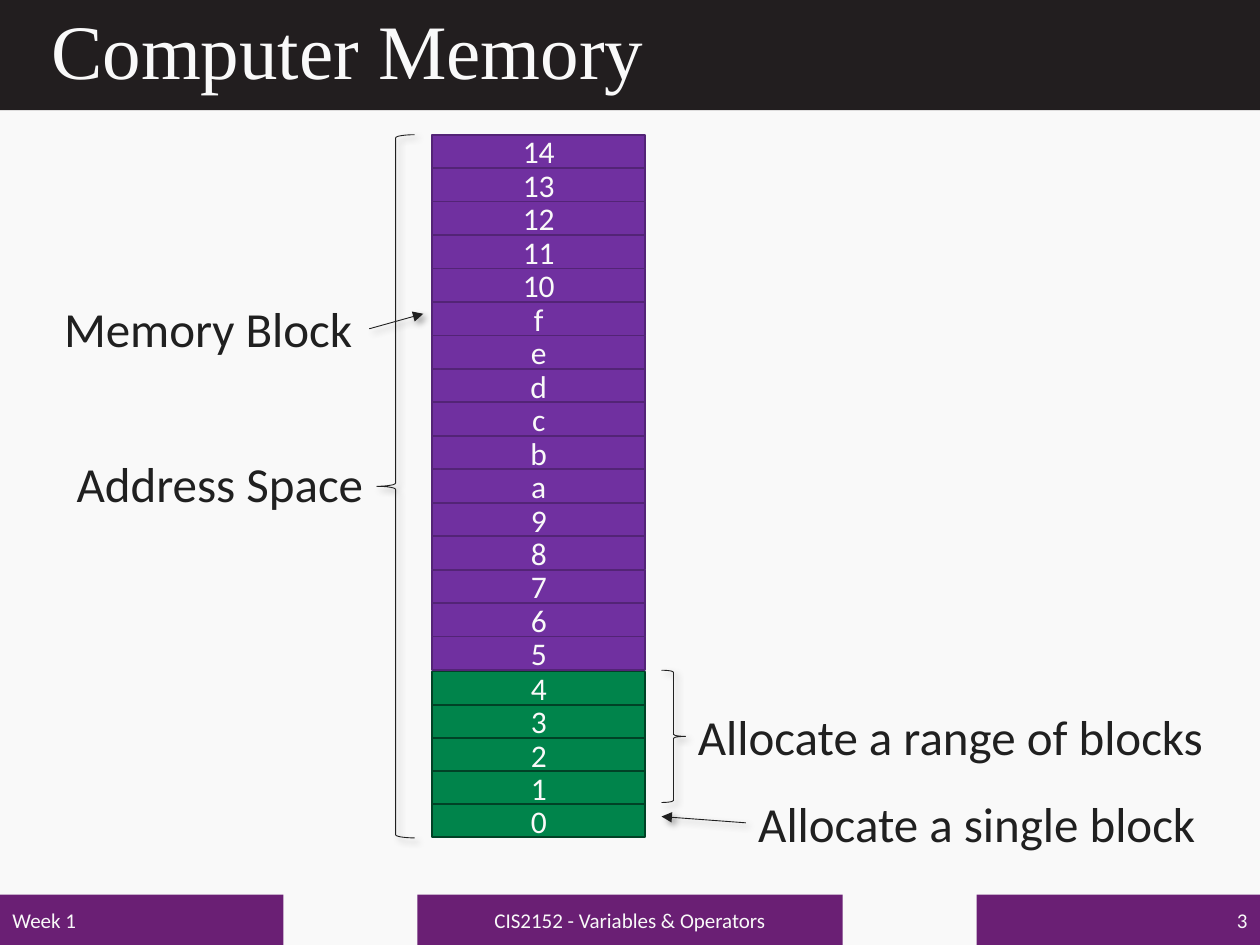
from dataclasses import dataclass

from lxml import etree
from pptx import Presentation
from pptx.dml.color import RGBColor
from pptx.enum.shapes import MSO_CONNECTOR, MSO_SHAPE
from pptx.enum.text import MSO_ANCHOR, MSO_AUTO_SIZE, PP_ALIGN
from pptx.oxml.ns import qn
from pptx.util import Pt

RECTANGLE = MSO_SHAPE.RECTANGLE
LEFT_BRACE = MSO_SHAPE.LEFT_BRACE
RIGHT_BRACE = MSO_SHAPE.RIGHT_BRACE
STRAIGHT = MSO_CONNECTOR.STRAIGHT
TOP, MIDDLE = MSO_ANCHOR.TOP, MSO_ANCHOR.MIDDLE
LEFT, CENTER, RIGHT = PP_ALIGN.LEFT, PP_ALIGN.CENTER, PP_ALIGN.RIGHT
FIT_SHAPE = MSO_AUTO_SIZE.SHAPE_TO_FIT_TEXT

PAPER, INK = "F9F9F9", "202020"
BODY_FONT, TITLE_FONT = "Calibri", "Times New Roman"
BLOCK_LEFT, BLOCK_WIDTH, BLOCK_HEIGHT = 247, 121.7, 19.1


@dataclass(frozen=True)
class Box:
    left: float
    top: float
    width: float
    height: float

    def lengths(self):
        return Pt(self.left), Pt(self.top), Pt(self.width), Pt(self.height)


@dataclass(frozen=True)
class FooterBar:
    left: float
    width: float
    text: str
    alignment: PP_ALIGN


@dataclass(frozen=True)
class BlockStack:
    addresses: range
    top: float
    pitch: float
    fill: str
    outline: str


@dataclass(frozen=True)
class Label:
    text: str
    box: Box


@dataclass(frozen=True)
class Brace:
    kind: MSO_SHAPE
    box: Box


@dataclass(frozen=True)
class Arrow:
    start: tuple[float, float]
    end: tuple[float, float]


FOOTER_BARS = [
    FooterBar(0, 162, "Week 1", LEFT),
    FooterBar(238.5, 243, "CIS2152 - Variables & Operators", CENTER),
    FooterBar(558, 162, "3", RIGHT),
]
STACKS = [
    BlockStack(range(0x14, 0x4, -1), 77, 19.12, "7030A0", "532476"),
    BlockStack(range(0x4, -1, -1), 383.8, 18.9, "00844B", "004226"),
]
LABELS = [
    Label("Address Space", Box(36.7, 255.6, 180, 41)),
    Label("Memory Block", Box(29.5, 167, 180.7, 41)),
    Label("Allocate a single block", Box(426.2, 450, 267.1, 41)),
    Label("Allocate a range of blocks", Box(391.7, 400.3, 306, 41)),
]
BRACES = [
    Brace(LEFT_BRACE, Box(215.3, 77, 21.6, 401.8)),
    Brace(RIGHT_BRACE, Box(378, 383, 13.7, 75.6)),
]
ARROWS = [
    Arrow((211, 187.9), (241.9, 179.3)),
    Arrow((426.2, 470.2), (378, 466.6)),
]


def color(hex_value: str) -> RGBColor:
    return RGBColor.from_string(hex_value)


def write_text(shape, text: str, size: float, text_color: str,
               alignment: PP_ALIGN = LEFT, anchor: MSO_ANCHOR = MIDDLE,
               font_name: str = BODY_FONT):
    frame = shape.text_frame
    frame.word_wrap = True
    frame.vertical_anchor = anchor
    paragraph = frame.paragraphs[0]
    paragraph.alignment = alignment
    run = paragraph.add_run()
    run.text = text
    run.font.size = Pt(size)
    run.font.name = font_name
    run.font.color.rgb = color(text_color)
    return paragraph


def add_rectangle(slide, box: Box, fill: str, outline: str | None = None):
    shape = slide.shapes.add_shape(RECTANGLE, *box.lengths())
    shape.shadow.inherit = False
    shape.fill.solid()
    shape.fill.fore_color.rgb = color(fill)
    if outline:
        shape.line.color.rgb = color(outline)
        shape.line.width = Pt(1)
    else:
        shape.line.fill.background()
    return shape


def style_thin_line(shape) -> None:
    shape.line.color.rgb = color(INK)
    shape.line.width = Pt(0.5)
    effects = etree.SubElement(shape._element.spPr, qn("a:effectLst"))
    shadow = etree.SubElement(
        effects, qn("a:outerShdw"), blurRad=str(Pt(4)), dist=str(Pt(3)),
        dir=str(45 * 60000), algn="tl", rotWithShape="0")
    shadow_color = etree.SubElement(shadow, qn("a:srgbClr"), val="000000")
    etree.SubElement(shadow_color, qn("a:alpha"), val="40000")


def add_footer_bar(slide, bar: FooterBar) -> None:
    shape = add_rectangle(slide, Box(bar.left, 511.2, bar.width, 28.8), "6A1F74")
    write_text(shape, bar.text, 12, PAPER, bar.alignment)


def add_stack(slide, stack: BlockStack) -> None:
    for row, address in enumerate(stack.addresses):
        box = Box(BLOCK_LEFT, stack.top + row * stack.pitch, BLOCK_WIDTH, BLOCK_HEIGHT)
        shape = add_rectangle(slide, box, stack.fill, stack.outline)
        write_text(shape, f"{address:x}", 18, PAPER, CENTER)


def add_label(slide, label: Label) -> None:
    shape = slide.shapes.add_textbox(*label.box.lengths())
    write_text(shape, label.text, 28, INK, anchor=TOP)
    shape.text_frame.word_wrap = False
    shape.text_frame.auto_size = FIT_SHAPE


def add_brace(slide, brace: Brace) -> None:
    shape = slide.shapes.add_shape(brace.kind, *brace.box.lengths())
    shape.fill.background()
    style_thin_line(shape)


def add_arrow(slide, arrow: Arrow) -> None:
    connector = slide.shapes.add_connector(
        STRAIGHT, *(Pt(value) for value in arrow.start + arrow.end))
    style_thin_line(connector)
    line = connector._element.spPr.find(qn("a:ln"))
    etree.SubElement(line, qn("a:tailEnd"), type="triangle")


def add_title(slide, text: str) -> None:
    add_rectangle(slide, Box(0, 0, 720, 63), "221E1F")
    shape = slide.shapes.add_textbox(*Box(22.3, 0, 676, 62).lengths())
    paragraph = write_text(shape, text, 44, PAPER, font_name=TITLE_FONT)
    paragraph.line_spacing = 0.9


def main() -> None:
    presentation = Presentation()
    presentation.slide_width, presentation.slide_height = Pt(720), Pt(540)
    slide = presentation.slides.add_slide(presentation.slide_layouts[6])
    slide.background.fill.solid()
    slide.background.fill.fore_color.rgb = color(PAPER)
    add_title(slide, "Computer Memory")
    for draw, items in (
        (add_footer_bar, FOOTER_BARS),
        (add_stack, STACKS),
        (add_brace, BRACES),
        (add_label, LABELS),
        (add_arrow, ARROWS),
    ):
        for item in items:
            draw(slide, item)
    presentation.save("out.pptx")


if __name__ == "__main__":
    main()
